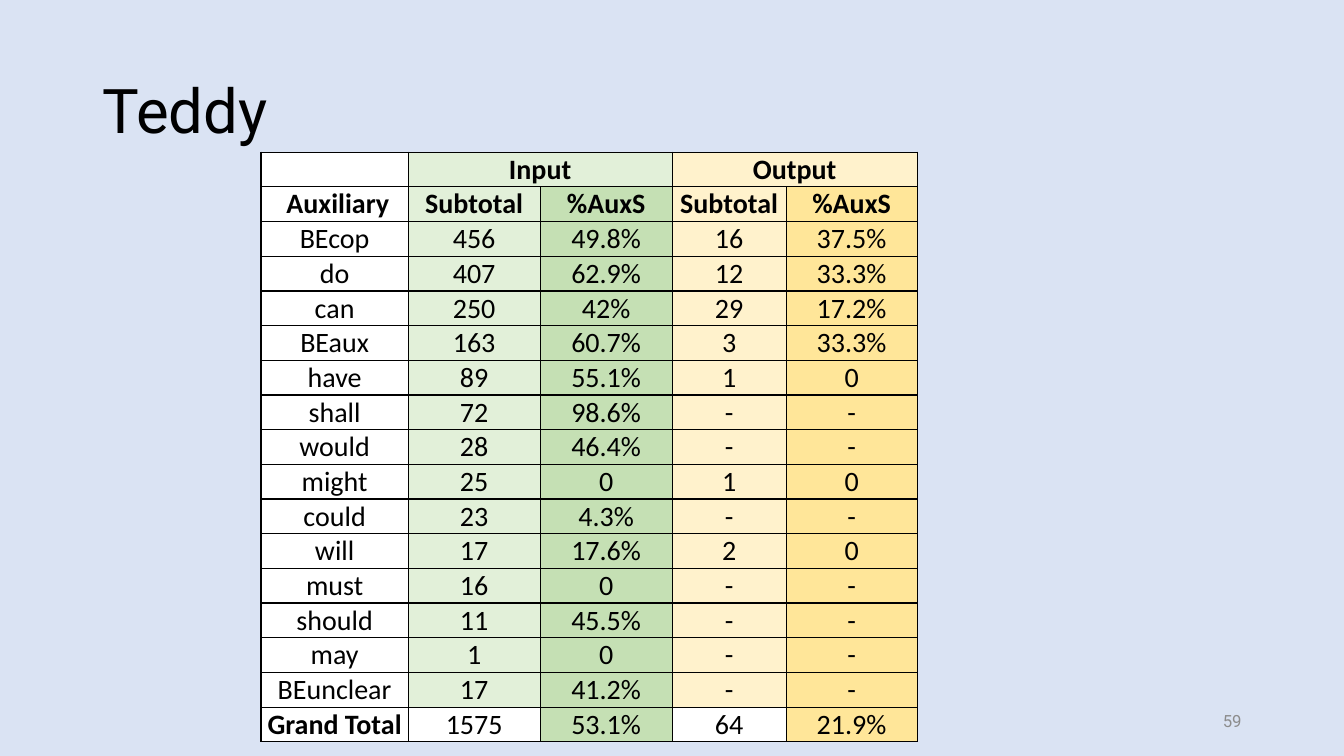
from lxml import etree
from pptx import Presentation
from pptx.dml.color import RGBColor
from pptx.enum.text import MSO_ANCHOR, PP_ALIGN
from pptx.oxml.ns import qn
from pptx.util import Pt

LEFT, CENTER, RIGHT = PP_ALIGN.LEFT, PP_ALIGN.CENTER, PP_ALIGN.RIGHT
MIDDLE, BOTTOM = MSO_ANCHOR.MIDDLE, MSO_ANCHOR.BOTTOM

BLACK, WHITE = "000000", "FFFFFF"
COLUMN_FILLS = [WHITE, "E2F0D9", "C5E0B4", "FFF2CC", "FFE699", None]
COLUMN_WIDTHS = [105.1, 94.3, 94.3, 81.4, 93.6, 93.6]
ROW_HEIGHT = 24.8
ROWS = [
    ("", "Input", "", "Output", ""),
    (" Auxiliary", "Subtotal", "%AuxS", "Subtotal", "%AuxS"),
    ("BEcop", "456", "49.8%", "16", "37.5%"),
    ("do", "407", "62.9%", "12", "33.3%"),
    ("can", "250", "42%", "29", "17.2%"),
    ("BEaux", "163", "60.7%", "3", "33.3%"),
    ("have", "89", "55.1%", "1", "0"),
    ("shall", "72", "98.6%", "-", "-"),
    ("would", "28", "46.4%", "-", "-"),
    ("might", "25", "0", "1", "0"),
    ("could", "23", "4.3%", "-", "-"),
    ("will", "17", "17.6%", "2", "0"),
    ("must", "16", "0", "-", "-"),
    ("should", "11", "45.5%", "-", "-"),
    ("may", "1", "0", "-", "-"),
    ("BEunclear", "17", "41.2%", "-", "-"),
    ("Grand Total", "1575", "53.1%", "64", "21.9%"),
]
HEADER_ROWS = 2
TOTAL_ROW = len(ROWS) - 1


def color(hex_string):
    """Turn a hex string into a colour."""
    return RGBColor.from_string(hex_string)


def write_text(text_frame, text, font="Calibri", size=20, fill=BLACK,
               bold=False, align=CENTER, line_spacing=None):
    """Write one formatted paragraph into a text frame."""
    paragraph = text_frame.paragraphs[0]
    paragraph.alignment = align
    paragraph.line_spacing = line_spacing
    run = paragraph.add_run()
    run.text = text
    run.font.name = font
    run.font.size = Pt(size)
    run.font.bold = bold
    run.font.color.rgb = color(fill)


def add_label(slide, box, text, **text_format):
    """Place a vertically centred text box."""
    shape = slide.shapes.add_textbox(*map(Pt, box))
    shape.text_frame.word_wrap = True
    shape.text_frame.vertical_anchor = MIDDLE
    write_text(shape.text_frame, text, **text_format)


def set_borders(cell, drawn_sides):
    """Draw thin black lines on the given sides and clear the others."""
    properties = cell._tc.get_or_add_tcPr()
    for side in "LRTB":
        line = etree.SubElement(properties, qn(f"a:ln{side}"), w=str(Pt(1)))
        if side in drawn_sides:
            solid = etree.SubElement(line, qn("a:solidFill"))
            etree.SubElement(solid, qn("a:srgbClr"), val=BLACK)
        else:
            etree.SubElement(line, qn("a:noFill"))


def format_cell(cell, fill):
    """Set the margins, borders and fill of a cell."""
    cell.margin_left = cell.margin_right = 0
    cell.margin_top = cell.margin_bottom = 0
    cell.vertical_anchor = BOTTOM
    set_borders(cell, "LRTB" if fill else "L")
    if fill:
        cell.fill.solid()
        cell.fill.fore_color.rgb = color(fill)
    else:
        cell.fill.background()


def add_auxiliary_table(slide, left, top):
    """Build the table of auxiliaries in input and output."""
    frame = slide.shapes.add_table(
        len(ROWS), len(COLUMN_WIDTHS), Pt(left), Pt(top),
        Pt(sum(COLUMN_WIDTHS)), Pt(ROW_HEIGHT * len(ROWS)))
    table = frame.table
    table.first_row = table.horz_banding = False
    for column, width in zip(table.columns, COLUMN_WIDTHS):
        column.width = Pt(width)
    for row_index, values in enumerate(ROWS):
        table.rows[row_index].height = Pt(ROW_HEIGHT)
        for column_index, fill in enumerate(COLUMN_FILLS):
            if row_index == TOTAL_ROW and column_index in (1, 3):
                fill = WHITE
            format_cell(table.cell(row_index, column_index), fill)
        for column_index, value in enumerate(values):
            if value:
                bold = row_index < HEADER_ROWS or (
                    row_index == TOTAL_ROW and column_index == 0)
                write_text(table.cell(row_index, column_index).text_frame,
                           value, bold=bold)
    for first in (1, 3):
        table.cell(0, first).merge(table.cell(0, first + 1))


def main():
    """Build and save the presentation."""
    presentation = Presentation()
    presentation.slide_width, presentation.slide_height = Pt(960), Pt(540)
    slide = presentation.slides.add_slide(presentation.slide_layouts[6])
    slide.background.fill.solid()
    slide.background.fill.fore_color.rgb = color("DAE3F3")
    add_label(slide, (66, 28.75, 828, 104.4), "Teddy", font="Roboto",
              size=44, align=LEFT, line_spacing=0.9)
    add_label(slide, (678, 500.5, 216, 28.75), "59", font="Roboto",
              size=12, fill="8C8C8C", align=RIGHT)
    add_auxiliary_table(slide, 186.5, 108.7)
    presentation.save("out.pptx")


if __name__ == "__main__":
    main()
